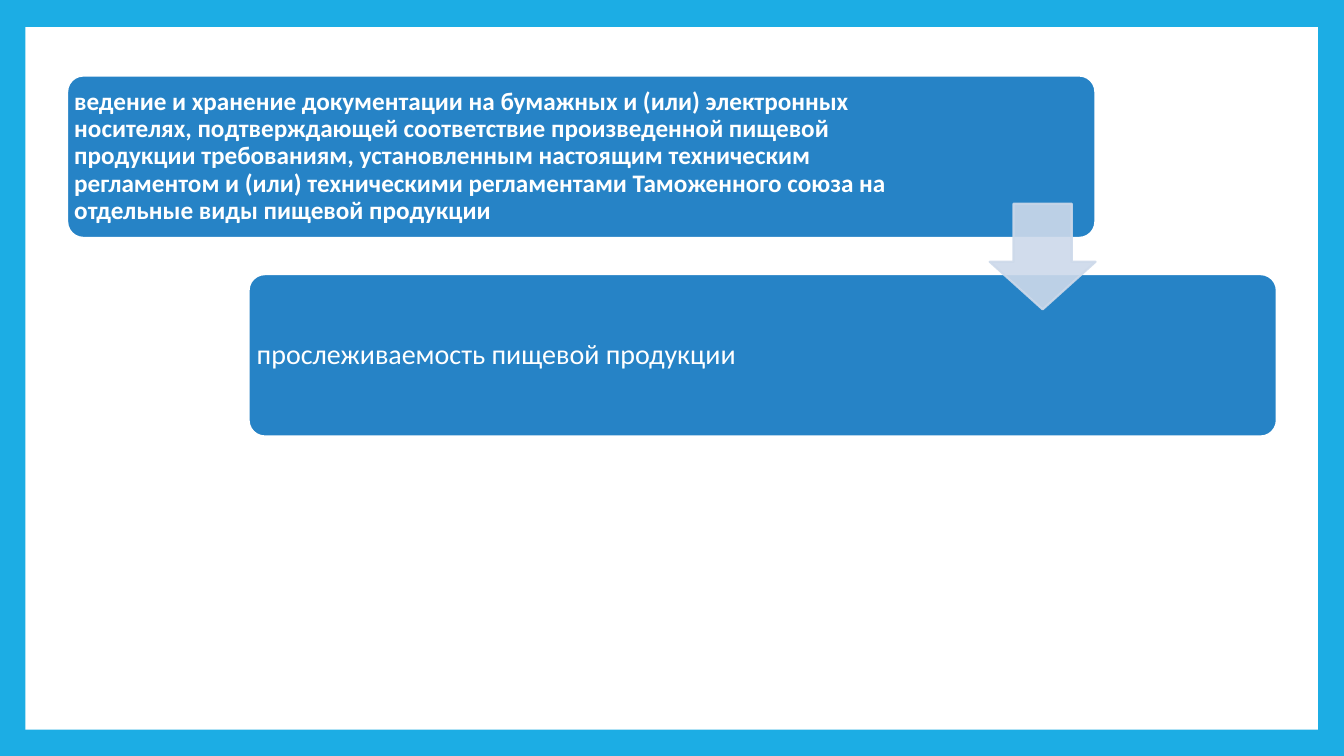
from dataclasses import dataclass

from lxml import etree
from pptx import Presentation
from pptx import util as u
from pptx.dml.color import RGBColor
from pptx.enum import shapes, text
from pptx.oxml.ns import qn

COLOURS = {"frame": "1CADE4", "paper": "FFFFFF", "card": "2683C6", "arrow": "CDD9EA"}
WIDTH, HEIGHT = u.Inches(13.33), u.Inches(7.5)
COLUMN, ROW = WIDTH / 100, HEIGHT / 100
KIND = shapes.MSO_SHAPE


@dataclass
class Area:
    """A place on the slide, in columns and rows of a 100 by 100 grid."""
    left: float
    top: float
    width: float
    height: float

    def emu(self) -> tuple[int, ...]:
        units = (COLUMN, ROW, COLUMN, ROW)
        sides = (self.left, self.top, self.width, self.height)
        return tuple(round(side * unit) for side, unit in zip(sides, units))


@dataclass
class Step:
    wording: str
    text_width: float
    inset: float
    font: dict


STEPS = [
    Step("ведение и хранение документации на бумажных и (или) электронных носителях, "
         "подтверждающей соответствие произведенной пищевой продукции требованиям, "
         "установленным настоящим техническим регламентом и (или) техническими "
         "регламентами Таможенного союза на отдельные виды пищевой продукции",
         64.74, 0.07, {"size": u.Pt(18), "bold": True}),
    Step("прослеживаемость пищевой продукции",
         55.14, 0.08, {"size": u.Pt(20), "bold": False}),
]
FIRST_CARD = Area(5, 10, 76.5, 21.47)
SHIFT_RIGHT, SHIFT_DOWN = 13.5, 26.27


def colour(name: str) -> RGBColor:
    return RGBColor.from_string(COLOURS[name])


def add_figure(page, kind, area: Area, fill: str, line: str | None = None, adjustments=()):
    figure = page.shapes.add_shape(kind, *area.emu())
    figure.shadow.inherit = False
    figure.fill.solid()
    figure.fill.fore_color.rgb = colour(fill)
    if line:
        figure.line.color.rgb = colour(line)
        figure.line.width = u.Pt(1.5)
    else:
        figure.line.fill.background()
    for index, value in enumerate(adjustments):
        figure.adjustments[index] = value
    return figure


def set_opacity(figure, percent: int) -> None:
    """Apply one opacity to both the fill and the line."""
    for tint in figure._element.spPr.iter(qn("a:srgbClr")):
        etree.SubElement(tint, qn("a:alpha"), val=str(percent * 1000))


def add_wording(page, step: Step, area: Area) -> None:
    frame = page.shapes.add_textbox(*area.emu()).text_frame
    layout = {"word_wrap": True, "vertical_anchor": text.MSO_ANCHOR.MIDDLE}
    layout |= {f"margin_{side}": u.Inches(step.inset)
               for side in ("left", "top", "right", "bottom")}
    for name, value in layout.items():
        setattr(frame, name, value)
    para = frame.paragraphs[0]
    para.line_spacing = 0.9
    span = para.add_run()
    span.text = step.wording
    for name, value in ({"name": "Calibri"} | step.font).items():
        setattr(span.font, name, value)
    span.font.color.rgb = colour("paper")


def add_step(page, number: int, step: Step) -> None:
    left = FIRST_CARD.left + number * SHIFT_RIGHT
    top = FIRST_CARD.top + number * SHIFT_DOWN
    card = Area(left, top, FIRST_CARD.width, FIRST_CARD.height)
    add_figure(page, KIND.ROUNDED_RECTANGLE, card, "card", "paper", [0.1])
    add_wording(page, step, Area(left, top, step.text_width, card.height))


def main() -> None:
    deck = Presentation()
    deck.slide_width, deck.slide_height = WIDTH, HEIGHT
    page = deck.slides.add_slide(deck.slide_layouts[6])
    page.background.fill.solid()
    page.background.fill.fore_color.rgb = colour("frame")

    add_figure(page, KIND.RECTANGLE, Area(1.88, 3.6, 96.17, 92.93), "paper")
    for number, step in enumerate(STEPS):
        add_step(page, number, step)
    arrow = add_figure(page, KIND.DOWN_ARROW, Area(73.64, 26.93, 7.88, 14),
                       "arrow", "arrow", [0.55, 0.45])
    set_opacity(arrow, 90)
    deck.save("out.pptx")


if __name__ == "__main__":
    main()
